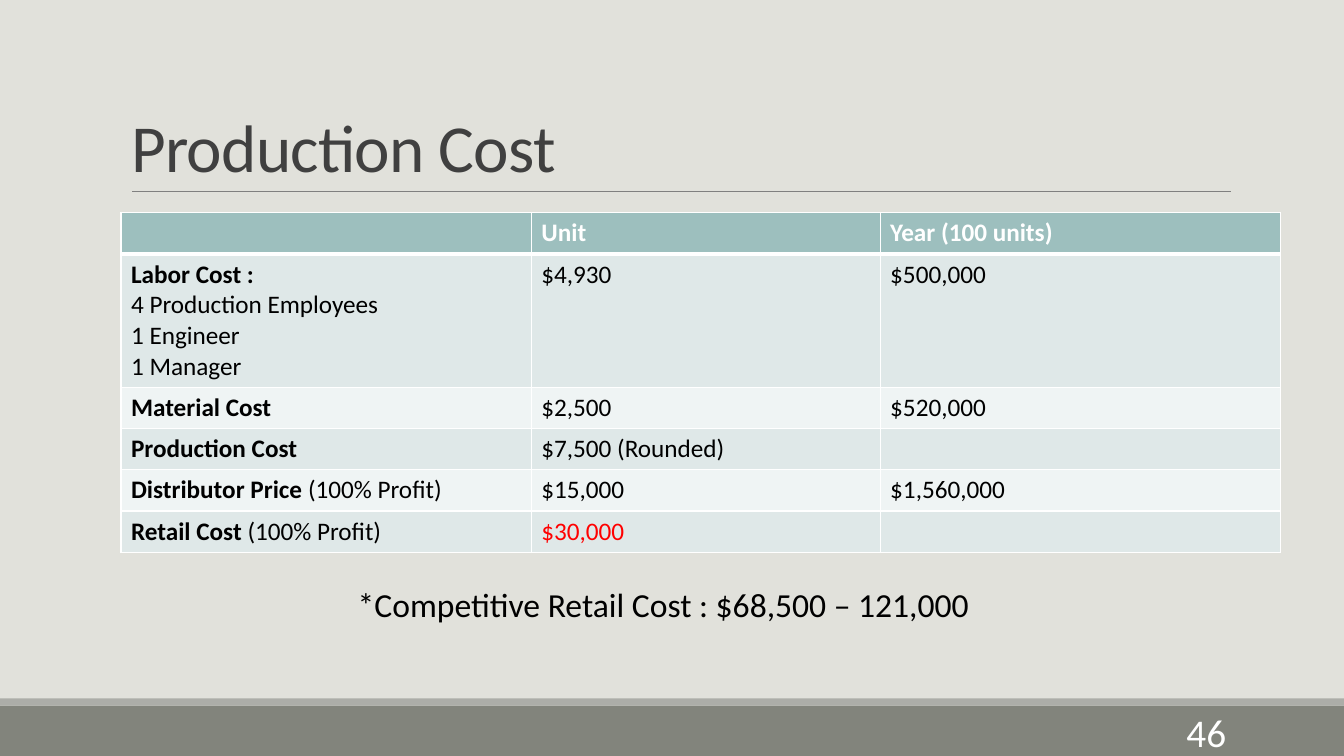
from lxml import etree
from pptx import Presentation
from pptx.dml.color import RGBColor
from pptx.enum.shapes import MSO_CONNECTOR, MSO_SHAPE
from pptx.enum.text import MSO_ANCHOR, MSO_AUTO_SIZE, PP_ALIGN
from pptx.oxml.ns import qn
from pptx.util import Inches, Pt

RECTANGLE = MSO_SHAPE.RECTANGLE
STRAIGHT = MSO_CONNECTOR.STRAIGHT
TOP, MIDDLE, BOTTOM = MSO_ANCHOR.TOP, MSO_ANCHOR.MIDDLE, MSO_ANCHOR.BOTTOM
LEFT, RIGHT = PP_ALIGN.LEFT, PP_ALIGN.RIGHT
GROW, FIXED = MSO_AUTO_SIZE.SHAPE_TO_FIT_TEXT, MSO_AUTO_SIZE.NONE
TITLE_ONLY = 5

BOLD = {"bold": True}
RED = {"color": "FF0000"}
PROFIT = ("(100% Profit)", {})
COLUMN_WIDTHS = [4.07, 3.46, 3.97]
ROW_HEIGHTS = [0.41, 1.31, 0.41, 0.41, 0.41, 0.41]
COST_ROWS = [
    [[], [[("Unit", {})]], [[("Year (100 units)", {})]]],
    [
        [
            [("Labor Cost :", BOLD)],
            [("4 Production Employees", {})],
            [("1 Engineer", {})],
            [("1 Manager", {})],
        ],
        [[("$4,930", {})]],
        [[("$500,000", {})]],
    ],
    [[[("Material Cost", BOLD)]], [[("$2,500", {})]], [[("$520,000", {})]]],
    [[[("Production Cost", BOLD)]], [[("$7,500 (Rounded)", {})]], []],
    [
        [[("Distributor Price ", BOLD), PROFIT]],
        [[("$15,000", {})]],
        [[("$1,560,000", {})]],
    ],
    [[[("Retail Cost ", BOLD), PROFIT]], [[("$30,000", RED)]], []],
]


def rgb(code):
    return RGBColor.from_string(code)


def write(frame, paragraphs, size=18, color="000000", bold=False,
          align=LEFT, spacing=None, tracking=None):
    for index, runs in enumerate(paragraphs):
        paragraph = frame.add_paragraph() if index else frame.paragraphs[0]
        paragraph.alignment = align
        if spacing:
            paragraph.line_spacing = spacing
        for words, changes in runs:
            run = paragraph.add_run()
            run.text = words
            run.font.name = "Calibri"
            run.font.size = Pt(size)
            run.font.bold = changes.get("bold", bold)
            run.font.color.rgb = rgb(changes.get("color", color))
            if tracking:
                run.font._element.set("spc", str(round(tracking * 100)))


class CostSlide:
    header_fill = "9DBFBE"
    band_fills = ["EFF4F4", "DFE8E8"]
    border = "FFFFFF"

    def __init__(self, deck, background):
        self.slide = deck.slides.add_slide(deck.slide_layouts[TITLE_ONLY])
        fill = self.slide.background.fill
        fill.solid()
        fill.fore_color.rgb = rgb(background)

    def band(self, left, top, width, height, color):
        band = self.slide.shapes.add_shape(
            RECTANGLE, Inches(left), Inches(top), Inches(width), Inches(height))
        band.shadow.inherit = False
        band.fill.solid()
        band.fill.fore_color.rgb = rgb(color)
        band.line.fill.background()

    def rule(self, left, right, top, color, weight):
        rule = self.slide.shapes.add_connector(
            STRAIGHT, Inches(left), Inches(top), Inches(right), Inches(top))
        rule.line.color.rgb = rgb(color)
        rule.line.width = Pt(weight)
        etree.SubElement(rule._element.spPr, qn("a:effectLst"))

    def title(self, left, top, width, height, words):
        title = self.slide.shapes.title
        title.left, title.top = Inches(left), Inches(top)
        title.width, title.height = Inches(width), Inches(height)
        title.text_frame.vertical_anchor = BOTTOM
        title.text_frame.auto_size = FIXED
        write(title.text_frame, [[(words, {})]], size=48, color="404040",
              spacing=0.85, tracking=-0.5)

    def text(self, left, top, width, height, words, anchor=TOP,
             fit=FIXED, **style):
        box = self.slide.shapes.add_textbox(
            Inches(left), Inches(top), Inches(width), Inches(height))
        frame = box.text_frame
        frame.word_wrap = True
        frame.auto_size = fit
        frame.vertical_anchor = anchor
        write(frame, [[(words, {})]], **style)

    def cell_borders(self, cell, is_header, under_header):
        properties = cell._tc.get_or_add_tcPr()
        for side in ("L", "R", "T", "B"):
            thick = (is_header and side == "B") or (under_header and side == "T")
            line = etree.SubElement(properties, qn(f"a:ln{side}"),
                                    w=str(Pt(3 if thick else 1)))
            solid = etree.SubElement(line, qn("a:solidFill"))
            etree.SubElement(solid, qn("a:srgbClr"), val=self.border)

    def table(self, left, top, widths, heights, rows):
        table = self.slide.shapes.add_table(
            len(rows), len(widths), Inches(left), Inches(top),
            Inches(sum(widths)), Inches(sum(heights))).table
        for column, width in zip(table.columns, widths):
            column.width = Inches(width)
        for row, height in zip(table.rows, heights):
            row.height = Inches(height)
        for row_index, row in enumerate(rows):
            is_header = row_index == 0
            fill = self.header_fill if is_header else self.band_fills[row_index % 2]
            for column_index, paragraphs in enumerate(row):
                cell = table.cell(row_index, column_index)
                self.cell_borders(cell, is_header, row_index == 1)
                cell.fill.solid()
                cell.fill.fore_color.rgb = rgb(fill)
                write(cell.text_frame, paragraphs, bold=is_header,
                      color="FFFFFF" if is_header else "000000")


def main():
    deck = Presentation()
    deck.slide_width, deck.slide_height = Inches(13.33), Inches(7.5)
    page = CostSlide(deck, "E1E1DB")
    page.band(0, 7, 13.33, 0.5, "82847C")
    page.band(0, 6.93, 13.33, 0.07, "ACADA8")
    page.rule(1.31, 12.21, 1.9, "808080", 0.5)
    page.title(1.2, 0.31, 11, 1.59, "Production Cost")
    page.text(10.83, 7.06, 1.43, 0.4, "46", anchor=MIDDLE, size=28,
              color="FFFFFF", align=RIGHT)
    page.table(1.2, 2.11, COLUMN_WIDTHS, ROW_HEIGHTS, COST_ROWS)
    page.text(3.45, 5.74, 6.5, 0.5, "*Competitive Retail Cost : $68,500 – 121,000",
              fit=GROW, size=24)
    deck.save("out.pptx")


if __name__ == "__main__":
    main()
